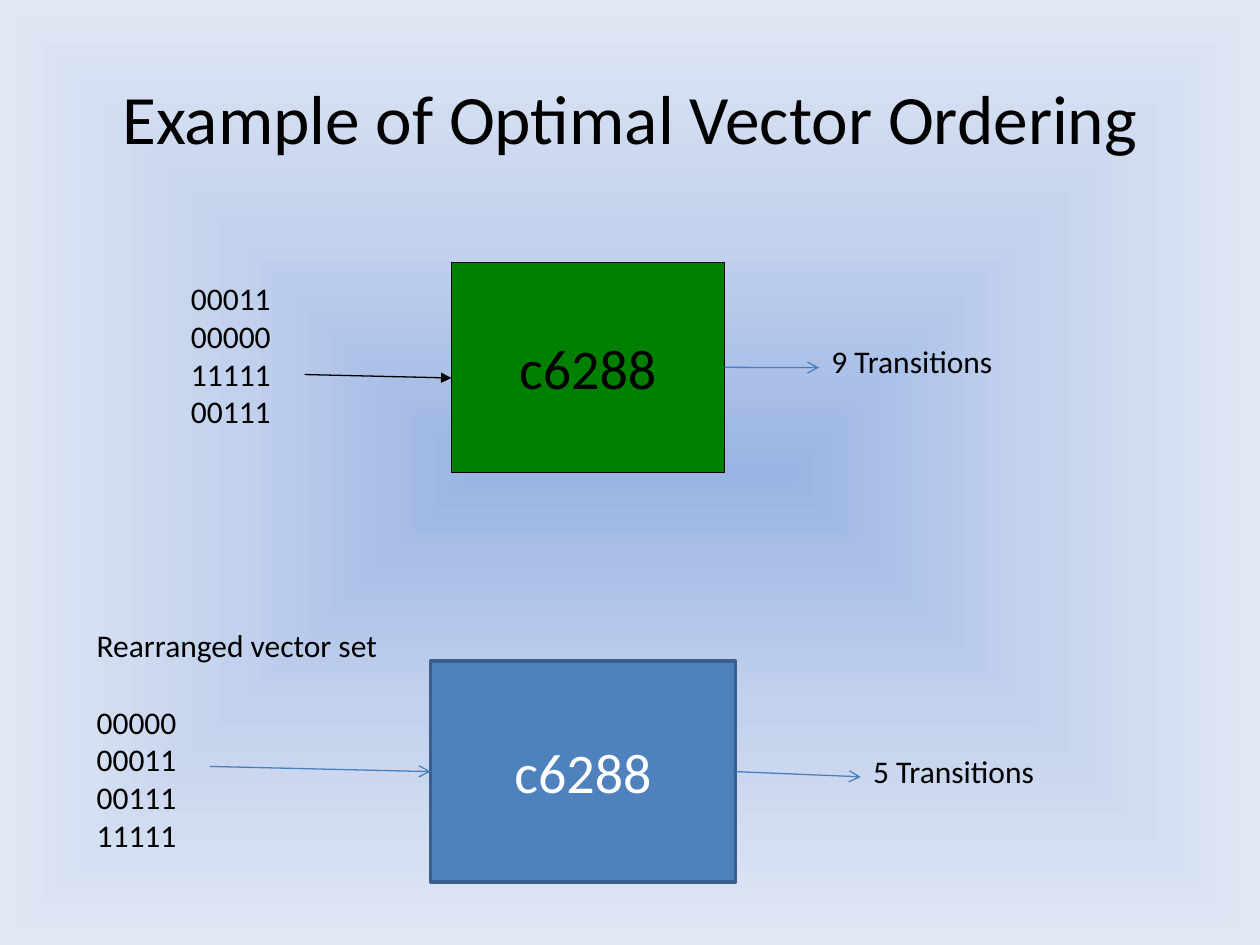
from lxml.etree import SubElement
from pptx import Presentation
from pptx.dml.color import RGBColor
from pptx.enum.shapes import MSO_CONNECTOR, MSO_SHAPE
from pptx.enum.text import MSO_ANCHOR, MSO_AUTO_SIZE, PP_ALIGN
from pptx.oxml import parse_xml
from pptx.oxml.ns import nsdecls, qn
from pptx.util import Cm, Pt

FONT = "Calibri"
BLACK = RGBColor(0x00, 0x00, 0x00)
WHITE = RGBColor(0xFF, 0xFF, 0xFF)
GREEN = RGBColor(0x00, 0x80, 0x00)
BLUE = RGBColor(0x4F, 0x81, 0xBD)
DARK_BLUE = RGBColor(0x3A, 0x5F, 0x8C)
ARROW_BLUE = RGBColor(0x4B, 0x7E, 0xBC)
GLOW = [
    (0, RGBColor(0x9A, 0xB5, 0xE4)),
    (50, RGBColor(0xC2, 0xD1, 0xED)),
    (100, RGBColor(0xE1, 0xE8, 0xF5)),
]


def write(tf, *lines, size=18, color=BLACK, align=PP_ALIGN.LEFT,
          anchor=MSO_ANCHOR.TOP, wrap=True):
    """Fill a text frame with one paragraph per line and return them."""
    tf.word_wrap = wrap
    tf.auto_size = MSO_AUTO_SIZE.NONE
    tf.vertical_anchor = anchor
    for i, line in enumerate(lines):
        p = tf.add_paragraph() if i else tf.paragraphs[0]
        p.alignment = align
        r = p.add_run()
        r.text = line
        r.font.name, r.font.size = FONT, Pt(size)
        r.font.color.rgb = color
    return tf.paragraphs


class Diagram:
    """Holds the current slide and draws its elements; lengths are in cm."""

    def __init__(self, s):
        self.s = s

    def background(self, stops):
        self.s.background.fill.solid()
        solid = self.s.element.xpath("p:cSld/p:bg/p:bgPr/a:solidFill")[0]
        gs = "".join(
            f'<a:gs pos="{pos * 1000}"><a:srgbClr val="{color}"/></a:gs>'
            for pos, color in stops)
        solid.getparent().replace(solid, parse_xml(
            f'<a:gradFill {nsdecls("a")} rotWithShape="1">'
            f'<a:gsLst>{gs}</a:gsLst><a:path path="shape">'
            '<a:fillToRect l="50000" t="50000" r="50000" b="50000"/>'
            '</a:path></a:gradFill>'))

    def title(self, text, x, y, w, h):
        sp = self.s.shapes.title
        sp.left, sp.top, sp.width, sp.height = Cm(x), Cm(y), Cm(w), Cm(h)
        write(sp.text_frame, text, size=39.6, align=PP_ALIGN.CENTER,
              anchor=MSO_ANCHOR.MIDDLE)

    def text(self, x, y, w, h, *lines, **style):
        sp = self.s.shapes.add_textbox(Cm(x), Cm(y), Cm(w), Cm(h))
        return write(sp.text_frame, *lines, **style)

    def circuit(self, text, x, y, w, h, fill, line, width, color):
        sp = self.s.shapes.add_shape(
            MSO_SHAPE.RECTANGLE, Cm(x), Cm(y), Cm(w), Cm(h))
        sp.shadow.inherit = False
        sp.fill.solid()
        sp.fill.fore_color.rgb = fill
        sp.line.color.rgb, sp.line.width = line, Pt(width)
        write(sp.text_frame, text, size=32, color=color,
              align=PP_ALIGN.CENTER, anchor=MSO_ANCHOR.MIDDLE)
        return sp

    def arrow(self, x1, y1, x2, y2, color=ARROW_BLUE, head="arrow",
              source=None, target=None):
        """Draw left to right, from the source's right to the target's left side."""
        c = self.s.shapes.add_connector(
            MSO_CONNECTOR.STRAIGHT, Cm(x1), Cm(y1), Cm(x2), Cm(y2))
        if source is not None:
            c.begin_connect(source, 3)
        if target is not None:
            c.end_connect(target, 1)
        c.line.color.rgb, c.line.width = color, Pt(0.75)
        SubElement(c.line._get_or_add_ln(), qn("a:tailEnd"), type=head)
        SubElement(c.element.spPr, qn("a:effectLst"))


def main():
    prs = Presentation()
    prs.slide_width, prs.slide_height = Cm(25.4), Cm(19.05)
    d = Diagram(prs.slides.add_slide(prs.slide_layouts[5]))
    d.background(GLOW)
    d.title("Example of Optimal Vector Ordering", 1.27, 0.76, 22.86, 3.18)

    # Given vector order
    d.text(3.6, 5.5, 2.54, 4.1, "00011", "00000", "11111", "00111")
    given = d.circuit("c6288", 9.1, 5.29, 5.5, 4.23, GREEN, BLACK, 0.75, BLACK)
    d.arrow(6.14, 7.55, 9.1, 7.62, color=BLACK, head="triangle")
    d.arrow(14.6, 7.41, 16.51, 7.41, source=given)
    d.text(16.51, 6.77, 6.2, 1.03, "9 Transitions")

    # Rearranged vector order
    paragraphs = d.text(1.7, 12.5, 18.3, 6.5, "Rearranged vector set",
                        "00000", "00011", "00111", "11111")
    paragraphs[1].space_before = Pt(22)
    better = d.circuit("c6288", 8.68, 13.33, 6.15, 4.45,
                       BLUE, DARK_BLUE, 2, WHITE)
    d.arrow(4.23, 15.45, 8.68, 15.56, target=better)
    d.arrow(14.83, 15.56, 17.35, 15.66, source=better)
    d.text(17.35, 15.03, 3.78, 1.03, "5 Transitions", wrap=False)

    prs.save("out.pptx")


if __name__ == "__main__":
    main()
